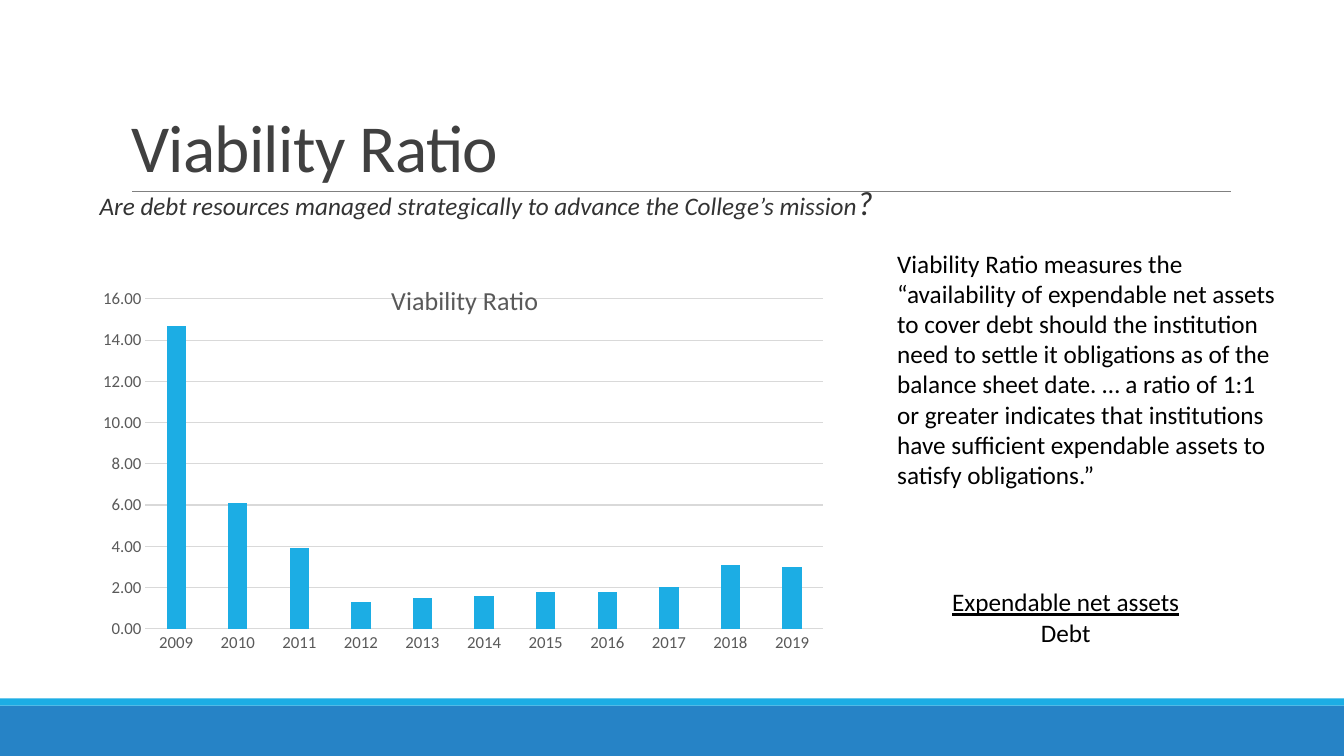
from lxml import etree
from pptx import Presentation
from pptx.chart.data import CategoryChartData
from pptx.dml.color import RGBColor
from pptx.enum.chart import XL_CHART_TYPE, XL_TICK_MARK
from pptx.enum.shapes import MSO_CONNECTOR, MSO_SHAPE
from pptx.enum.text import MSO_ANCHOR, MSO_AUTO_SIZE, PP_ALIGN
from pptx.oxml import parse_xml
from pptx.oxml.ns import nsdecls, qn
from pptx.util import Inches, Pt

# Content
TITLE = "Viability Ratio"
QUESTION = "Are debt resources managed strategically to advance the College’s mission"
DEFINITION = (
    "Viability Ratio measures the “availability of expendable net assets to cover "
    "debt should the institution need to settle it obligations as of the balance "
    "sheet date. … a ratio of 1:1 or greater indicates that institutions have "
    "sufficient expendable assets to satisfy obligations.”"
)
NUMERATOR, DENOMINATOR = "Expendable net assets", "Debt"
RATIOS = {
    2009: 14.7, 2010: 6.1, 2011: 3.9, 2012: 1.3, 2013: 1.5, 2014: 1.6,
    2015: 1.8, 2016: 1.8, 2017: 2.0, 2018: 3.1, 2019: 3.0,
}

# Style and layout, in inches
FONT = "Calibri"
BLUE = RGBColor(0x26, 0x83, 0xC6)
SKY = RGBColor(0x1C, 0xAD, 0xE4)
BLACK = RGBColor(0, 0, 0)
TITLE_GREY = RGBColor(0x40, 0x40, 0x40)
QUESTION_GREY = RGBColor(0x33, 0x33, 0x33)
CHART_GREY = RGBColor(0x59, 0x59, 0x59)
GRID_GREY = RGBColor(0xD9, 0xD9, 0xD9)
RULE_GREY = RGBColor(0x80, 0x80, 0x80)
WIDTH, HEIGHT = 13.33, 7.5
FOOTER, STRIPE = 0.5, 0.07
LEFT, RULE_Y = 0.89, 1.9


def style_font(font, size, color):
    font.name, font.size = FONT, Pt(size)
    font.color.rgb = color
    font.bold = False


def add_run(paragraph, text, size=18, color=BLACK, italic=False, underline=False):
    run = paragraph.add_run()
    run.text = text
    style_font(run.font, size, color)
    run.font.italic, run.font.underline = italic, underline
    return run


def add_text_box(slide, *box, wrap=True, align=PP_ALIGN.LEFT):
    frame = slide.shapes.add_textbox(*map(Inches, box)).text_frame
    frame.word_wrap = wrap
    frame.auto_size = MSO_AUTO_SIZE.SHAPE_TO_FIT_TEXT
    frame.paragraphs[0].alignment = align
    return frame.paragraphs[0]


def add_band(slide, top, height, color):
    band = slide.shapes.add_shape(
        MSO_SHAPE.RECTANGLE, 0, Inches(top), Inches(WIDTH), Inches(height))
    band.shadow.inherit = False
    band.fill.solid()
    band.fill.fore_color.rgb = color
    band.line.fill.background()


def manual_layout(inner=False, **shares):
    """Place a chart part by shares of the chart's size."""
    target = '<c:layoutTarget val="inner"/>' if inner else ""
    modes = '<c:xMode val="edge"/><c:yMode val="edge"/>'
    values = "".join(f'<c:{name} val="{value}"/>' for name, value in shares.items())
    return parse_xml(f'<c:layout {nsdecls("c")}><c:manualLayout>'
                     f'{target}{modes}{values}</c:manualLayout></c:layout>')


def add_ratio_chart(slide):
    data = CategoryChartData(number_format="#,##0.00")
    data.categories = [str(year) for year in RATIOS]
    data.add_series(TITLE, list(RATIOS.values()))
    chart = slide.shapes.add_chart(
        XL_CHART_TYPE.COLUMN_CLUSTERED,
        *map(Inches, (LEFT, 2.54, 7.36, 4.26)), data).chart
    style_font(chart.font, 10, BLACK)
    chart.has_legend = False

    # Heading overlaid on the plot
    chart.has_title = True
    add_run(chart.chart_title.text_frame.paragraphs[0], TITLE, 18.6, CHART_GREY)
    heading = chart.chart_title._element
    for name in ("c:layout", "c:overlay"):
        for old in heading.findall(qn(name)):
            heading.remove(old)
    heading.find(qn("c:tx")).addnext(manual_layout(x=0.4, y=0.05))
    overlay = etree.Element(qn("c:overlay"), val="1")
    heading.find(qn("c:layout")).addnext(overlay)

    # Plot and columns
    plot = chart.plots[0]
    plot.gap_width, plot.overlap, plot.vary_by_categories = 219, -27, False
    plot.series[0].format.fill.solid()
    plot.series[0].format.fill.fore_color.rgb = SKY
    plot_area = chart._chartSpace.chart.plotArea
    for old in plot_area.findall(qn("c:layout")):
        plot_area.remove(old)
    plot_area.insert(0, manual_layout(inner=True, x=0.075, y=0.1, w=0.913, h=0.768))

    # Axes
    years, values = chart.category_axis, chart.value_axis
    for axis in (years, values):
        style_font(axis.tick_labels.font, 12, CHART_GREY)
        axis.major_tick_mark = axis.minor_tick_mark = XL_TICK_MARK.NONE
    values.minimum_scale, values.maximum_scale, values.major_unit = 0, 16, 2
    values.tick_labels.number_format = "#,##0.00"
    values.tick_labels.number_format_is_linked = False
    values.format.line.fill.background()
    for line in (years.format.line, values.major_gridlines.format.line):
        line.color.rgb, line.width = GRID_GREY, Pt(0.75)


def main():
    presentation = Presentation()
    presentation.slide_width, presentation.slide_height = Inches(WIDTH), Inches(HEIGHT)
    slide = presentation.slides.add_slide(presentation.slide_layouts[5])

    # Footer bands and title rule
    add_band(slide, HEIGHT - FOOTER, FOOTER, BLUE)
    add_band(slide, HEIGHT - FOOTER - STRIPE, STRIPE, SKY)
    rule = slide.shapes.add_connector(
        MSO_CONNECTOR.STRAIGHT, *map(Inches, (1.31, RULE_Y, 12.21, RULE_Y)))
    rule.line.color.rgb, rule.line.width = RULE_GREY, Pt(0.5)
    etree.SubElement(rule._element.spPr, qn("a:effectLst"))

    # Title
    title = slide.shapes.title
    title.left, title.top, title.width, title.height = map(
        Inches, (1.2, 0.31, 11, RULE_Y - 0.31))
    title.text_frame.vertical_anchor = MSO_ANCHOR.BOTTOM
    title.text_frame.auto_size = MSO_AUTO_SIZE.NONE
    paragraph = title.text_frame.paragraphs[0]
    paragraph.alignment, paragraph.line_spacing = PP_ALIGN.LEFT, 0.85
    run = add_run(paragraph, TITLE, 48, TITLE_GREY)
    run.font._element.set("spc", "-50")

    add_ratio_chart(slide)

    # Definition, question and formula
    add_run(add_text_box(slide, 8.8, 2.41, 3.96, 3.13), DEFINITION)
    question = add_text_box(slide, LEFT, 1.76, 8.83, 0.5)
    add_run(question, QUESTION, color=QUESTION_GREY, italic=True)
    add_run(question, "?", size=24, color=QUESTION_GREY, italic=True)
    formula = add_text_box(slide, 9.33, 5.77, 2.48, 0.71,
                           wrap=False, align=PP_ALIGN.CENTER)
    add_run(formula, NUMERATOR, underline=True)
    formula.add_line_break()
    add_run(formula, DENOMINATOR)

    presentation.save("out.pptx")


if __name__ == "__main__":
    main()
